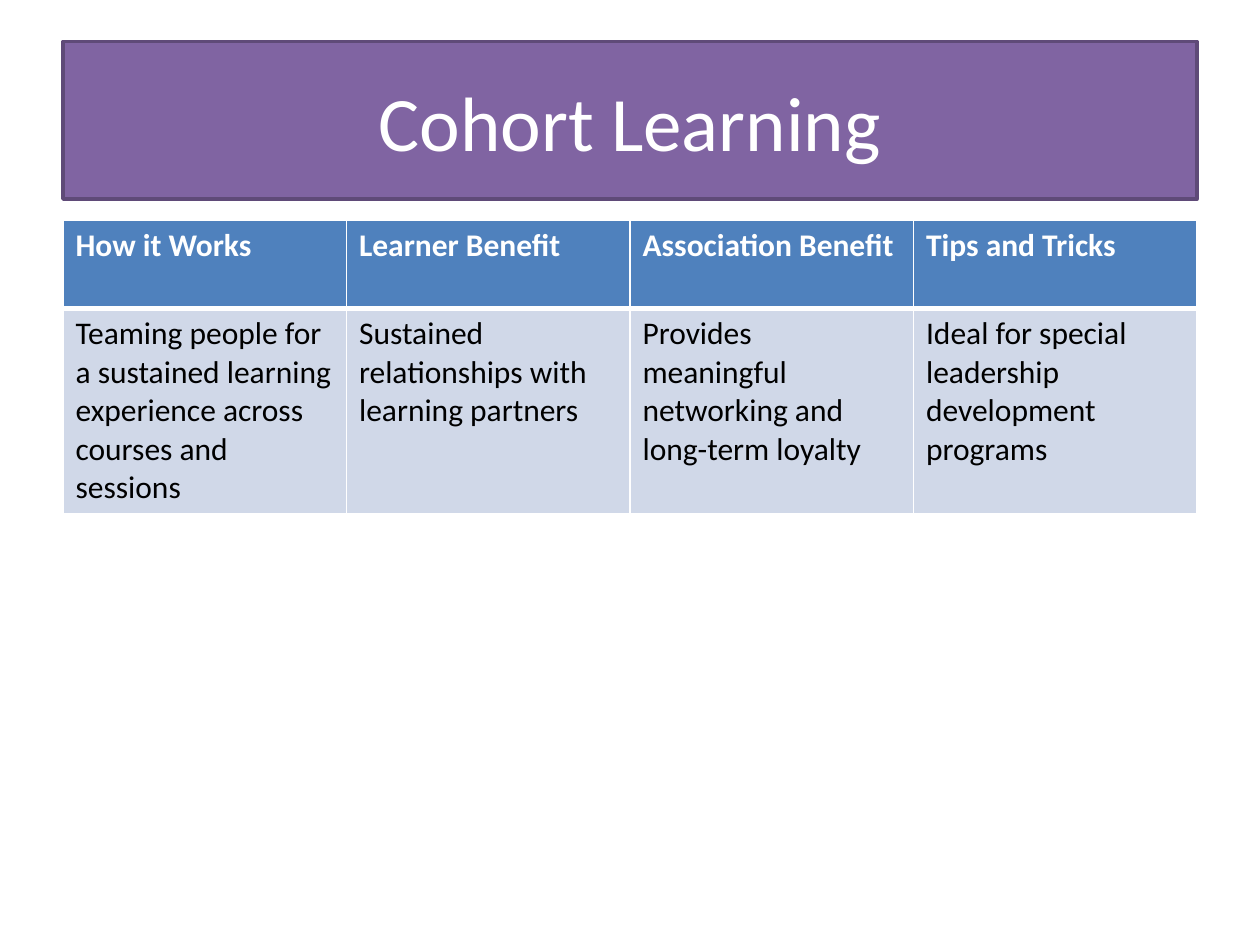
import lxml.etree
import pptx
import pptx.dml.color
import pptx.enum.shapes
import pptx.enum.text
import pptx.oxml.ns
import pptx.util


def tint(code):
    return pptx.dml.color.RGBColor.from_string(code)


class Page:
    """Style and current slide; lengths are shares of the slide's size."""
    font = "Calibri"
    white, black = "FFFFFF", "000000"
    plum, edge = "8064A2", "5F4A78"
    blue, pale = "4F81BD", "D0D8E8"

    def __init__(self, deck):
        self.wide, self.high = deck.slide_width, deck.slide_height
        self.slide = deck.slides.add_slide(deck.slide_layouts[6])

    def box(self, left, top, width, height):
        return (int(left * self.wide), int(top * self.high),
                int(width * self.wide), int(height * self.high))

    def label(self, frame, text, size, color, bold=False):
        frame.word_wrap = True
        para = frame.paragraphs[0]
        run = para.add_run()
        run.text = text
        run.font.name = self.font
        run.font.size = pptx.util.Pt(size)
        run.font.bold = bold
        run.font.color.rgb = tint(color)
        return para

    def banner(self, text, *area):
        shape = self.slide.shapes.add_shape(
            pptx.enum.shapes.MSO_SHAPE.RECTANGLE, *self.box(*area))
        shape.shadow.inherit = False
        shape.fill.solid()
        shape.fill.fore_color.rgb = tint(self.plum)
        shape.line.color.rgb = tint(self.edge)
        shape.line.width = pptx.util.Pt(2)
        shape.text_frame.vertical_anchor = pptx.enum.text.MSO_ANCHOR.MIDDLE
        para = self.label(shape.text_frame, text, 44, self.white)
        para.alignment = pptx.enum.text.PP_ALIGN.CENTER

    def border(self, cell, **sides):
        """Draw white cell borders; sides maps L, R, T, B to points."""
        props = cell._tc.get_or_add_tcPr()
        for spot, (side, width) in enumerate(sides.items()):
            line = lxml.etree.Element(pptx.oxml.ns.qn("a:ln" + side),
                                      w=str(pptx.util.Pt(width)))
            fill = lxml.etree.SubElement(line, pptx.oxml.ns.qn("a:solidFill"))
            lxml.etree.SubElement(fill, pptx.oxml.ns.qn("a:srgbClr"),
                                  val=self.white)
            props.insert(spot, line)

    def table(self, rows, shares, left, top, width):
        """Draw rows of text under a header; shares are the row heights."""
        area = self.box(left, top, width, sum(shares))
        grid = self.slide.shapes.add_table(
            len(rows), len(rows[0]), *area).table
        for r, (texts, share) in enumerate(zip(rows, shares)):
            head = r == 0
            grid.rows[r].height = int(share * self.high)
            for c, text in enumerate(texts):
                cell = grid.cell(r, c)
                cell.fill.solid()
                cell.fill.fore_color.rgb = tint(self.blue if head else self.pale)
                self.label(cell.text_frame, text, 18,
                           self.white if head else self.black, head)
                self.border(cell, L=1, R=1, T=1 if head else 3,
                            B=3 if head else 1)


def main():
    deck = pptx.Presentation()
    deck.slide_width = pptx.util.Inches(10)
    deck.slide_height = pptx.util.Inches(7.5)
    page = Page(deck)
    page.banner("Cohort Learning", 0.05, 0.33 / 7.5, 0.9, 1.25 / 7.5)
    page.table([
        ["How it Works", "Learner Benefit", "Association Benefit",
         "Tips and Tricks"],
        ["Teaming people for a sustained learning experience across "
         "courses and sessions",
         "Sustained relationships with learning partners",
         "Provides meaningful networking and long-term loyalty",
         "Ideal for special leadership development programs"],
    ], [0.7 / 7.5, 1.6 / 7.5], 0.05, 1.75 / 7.5, 0.9)
    deck.save("out.pptx")


if __name__ == "__main__":
    main()
